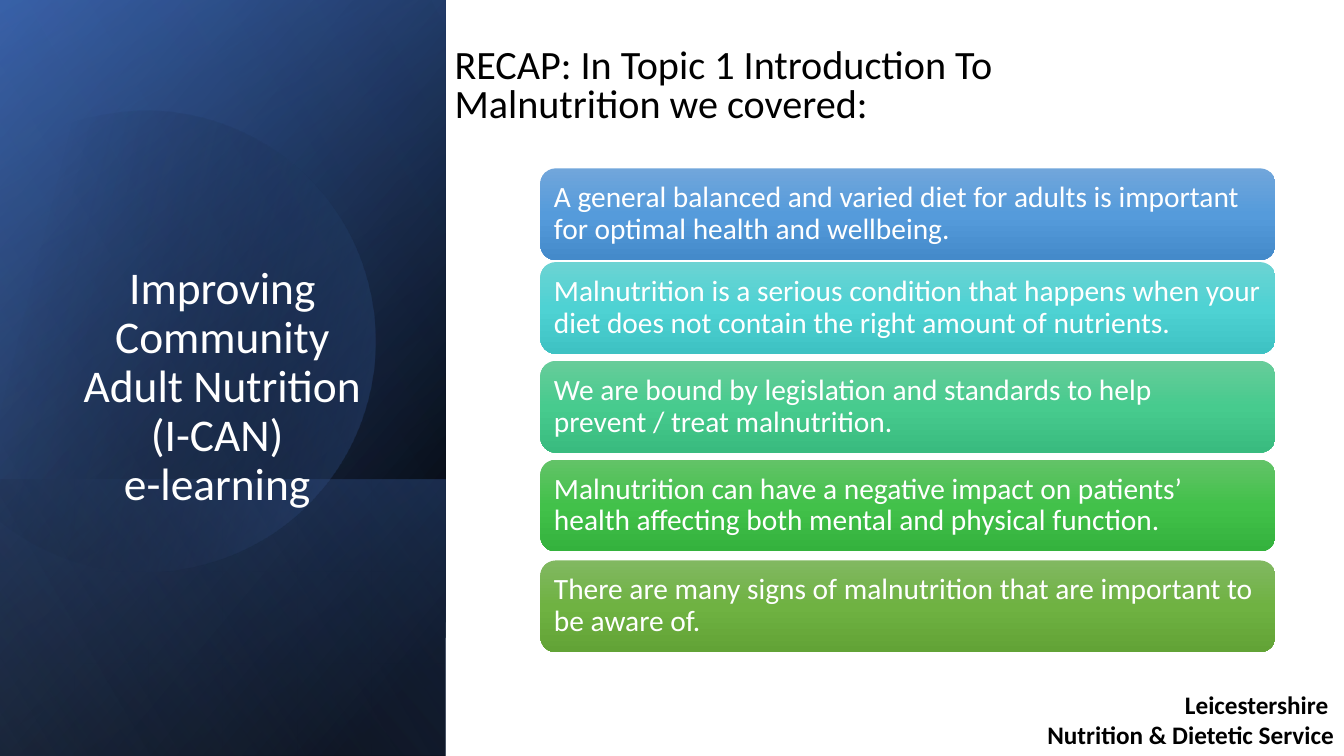
from math import cos, radians, sin

from lxml import etree
from pptx import Presentation
from pptx.dml.color import RGBColor
from pptx.enum.shapes import MSO_SHAPE as Shape
from pptx.enum.text import MSO_ANCHOR as Anchor, PP_ALIGN as Align
from pptx.oxml import parse_xml
from pptx.oxml.ns import nsdecls, qn
from pptx.util import Inches, Pt

BLACK = RGBColor(0x00, 0x00, 0x00)
WHITE = RGBColor(0xFF, 0xFF, 0xFF)
NAVY = RGBColor(0x2F, 0x55, 0x97)
BLUE = RGBColor(0x44, 0x72, 0xC4)
PALE_BLUE = RGBColor(0x8F, 0xAA, 0xDC)

WIDTH, HEIGHT = 13.33, 7.5
PANEL = 4.42


def paint_gradient(shape, stops, angle):
    """Fill with (position %, colour, opacity %) stops; drop line and shadow."""
    shape.shadow.inherit = False
    shape.line.fill.background()
    shape.fill.background()
    stop_xml = "".join(
        f'<a:gs pos="{position * 1000}"><a:srgbClr val="{colour}">'
        f'<a:alpha val="{opacity * 1000}"/></a:srgbClr></a:gs>'
        for position, colour, opacity in stops)
    gradient = parse_xml(
        f'<a:gradFill {nsdecls("a")} rotWithShape="1"><a:gsLst>{stop_xml}</a:gsLst>'
        f'<a:lin ang="{angle * 60000}" scaled="0"/></a:gradFill>')
    properties = shape._element.spPr
    properties.replace(properties.find("{*}noFill"), gradient)


def write(shape, lines, size, colour, anchor, align, spacing=1.0, bold=False):
    """Write one paragraph per line; a newline inside a line is a line break."""
    frame = shape.text_frame
    frame.word_wrap = True
    frame.vertical_anchor = anchor
    for number, line in enumerate(lines):
        paragraph = frame.add_paragraph() if number else frame.paragraphs[0]
        paragraph.alignment = align
        paragraph.line_spacing = spacing
        for part_number, part in enumerate(line.split("\n")):
            if part_number:
                paragraph.add_line_break()
            run = paragraph.add_run()
            run.text = part
            run.font.name = "Calibri"
            run.font.size = Pt(size)
            run.font.bold = bold
            run.font.color.rgb = colour


deck = Presentation()
deck.slide_width, deck.slide_height = Inches(WIDTH), Inches(HEIGHT)
slide = deck.slides.add_slide(deck.slide_layouts[6])
shapes = slide.shapes

# Side panel: turned gradient layers standing on the bottom edge, with a disc between
DISC = "disc"
panel_layers = [
    (HEIGHT, [(8, BLACK, 100), (100, NAVY, 100)], 50),
    (HEIGHT, [(0, BLACK, 0), (99, BLUE, 46)], 30),
    (2.74, [(2, BLUE, 29), (100, BLACK, 30)], 130),
    (DISC, [(29, BLACK, 0), (100, BLUE, 43)], 30),
    (HEIGHT, [(0, BLACK, 0), (99, PALE_BLUE, 11)], 120),
]
disc_left, disc_top, disc_width, disc_height = -0.55, 1.06, 4.27, 4.57
DISC_TURN = 343.9
# One segment per row, in slide inches: a curve has two controls and an end, a line an end
disc_segments = [
    [(1.49, 1.1)],
    [(2.46, 1.12), (3.35, 1.77), (3.63, 2.75)],
    [(3.98, 3.97), (3.28, 5.23), (2.07, 5.58)],
    [(1.31, 5.8), (0.53, 5.61), (-0.03, 5.14)],
    [(-0.15, 5.03)],
    [(-0.15, 1.75)],
    [(0, 1.61)],
    [(0.23, 1.42), (0.5, 1.28), (0.8, 1.19)],
    [(1.03, 1.13), (1.26, 1.1), (1.49, 1.1)],
]
turn_cos, turn_sin = cos(radians(-DISC_TURN)), sin(radians(-DISC_TURN))

for height, stops, angle in panel_layers:
    if height == DISC:
        ends = [segment[-1] for segment in disc_segments]
        outline = shapes.build_freeform(*ends[0], scale=Inches(1))
        outline.add_line_segments(ends[1:], close=True)
        layer = outline.convert_to_shape()
        layer.left, layer.top = Inches(disc_left), Inches(disc_top)
        layer.width, layer.height = Inches(disc_width), Inches(disc_height)
        layer.rotation = DISC_TURN
        route = next(layer._element.iter(qn("a:path")))
        route.set("w", str(layer.width))
        route.set("h", str(layer.height))
        for command, segment in zip(list(route), disc_segments):
            if len(segment) == 3:
                command.tag = qn("a:cubicBezTo")
            for point in list(command):
                command.remove(point)
            for x, y in segment:
                dx = x - disc_left - disc_width / 2
                dy = y - disc_top - disc_height / 2
                local_x = disc_width / 2 + dx * turn_cos - dy * turn_sin
                local_y = disc_height / 2 + dx * turn_sin + dy * turn_cos
                etree.SubElement(command, qn("a:pt"),
                                 x=str(Inches(local_x)), y=str(Inches(local_y)))
    else:
        layer = shapes.add_shape(
            Shape.RECTANGLE, Inches((PANEL - height) / 2),
            Inches(HEIGHT - (height + PANEL) / 2), Inches(height), Inches(PANEL))
        layer.rotation = 90
        layer._element.spPr.xfrm.set("flipH", "1")
    paint_gradient(layer, stops, angle)

course = shapes.add_textbox(Inches(0.5), Inches(2.49), Inches(3.41), Inches(2.62))
write(course, ["Improving Community Adult Nutrition (I-CAN) \ne-learning "],
      32.4, WHITE, Anchor.BOTTOM, Align.CENTER, 0.9)

# Recap points
recap_points = [
    (1.67, ("71A6DB", "559BDB", "448ACA"),
     "A general balanced and varied diet for adults is important for optimal health and wellbeing."),
    (2.6, ("6CD3D3", "4ED2D3", "3EC2C3"),
     "Malnutrition is a serious condition that happens when your diet does not contain "
     "the right amount of nutrients."),
    (3.58, ("67CC9A", "47CB8E", "39BB7F"),
     "We are bound by legislation and standards to help prevent / treat malnutrition."),
    (4.56, ("63C368", "42C14A", "34B23D"),
     "Malnutrition can have a negative impact on patients’ health affecting both mental "
     "and physical function."),
    (5.56, ("81B861", "6FB242", "62A336"),
     "There are many signs of malnutrition that are important to be aware of."),
]
for top, shades, point in recap_points:
    card = shapes.add_shape(Shape.ROUNDED_RECTANGLE, Inches(5.36), Inches(top),
                            Inches(7.29), Inches(0.91))
    paint_gradient(card, [(position, RGBColor.from_string(shade), 100)
                          for position, shade in zip((0, 50, 100), shades)], 90)
    frame = card.text_frame
    frame.margin_left = frame.margin_right = Inches(0.09)
    frame.margin_top = frame.margin_bottom = Inches(0.09)
    write(card, [point], 21, WHITE, Anchor.MIDDLE, Align.LEFT, 0.9)

heading = shapes.add_textbox(Inches(4.41), Inches(0.35), Inches(7.02), Inches(0.95))
write(heading, ["RECAP: In Topic 1 Introduction To Malnutrition we covered:"],
      28.7, BLACK, Anchor.BOTTOM, Align.LEFT, 0.8)

service = shapes.add_textbox(Inches(5.11), Inches(6.79), Inches(WIDTH - 5.11), Inches(0.71))
write(service, ["Leicestershire ", "Nutrition & Dietetic Service"],
      18, BLACK, Anchor.TOP, Align.RIGHT, bold=True)

deck.save("out.pptx")
